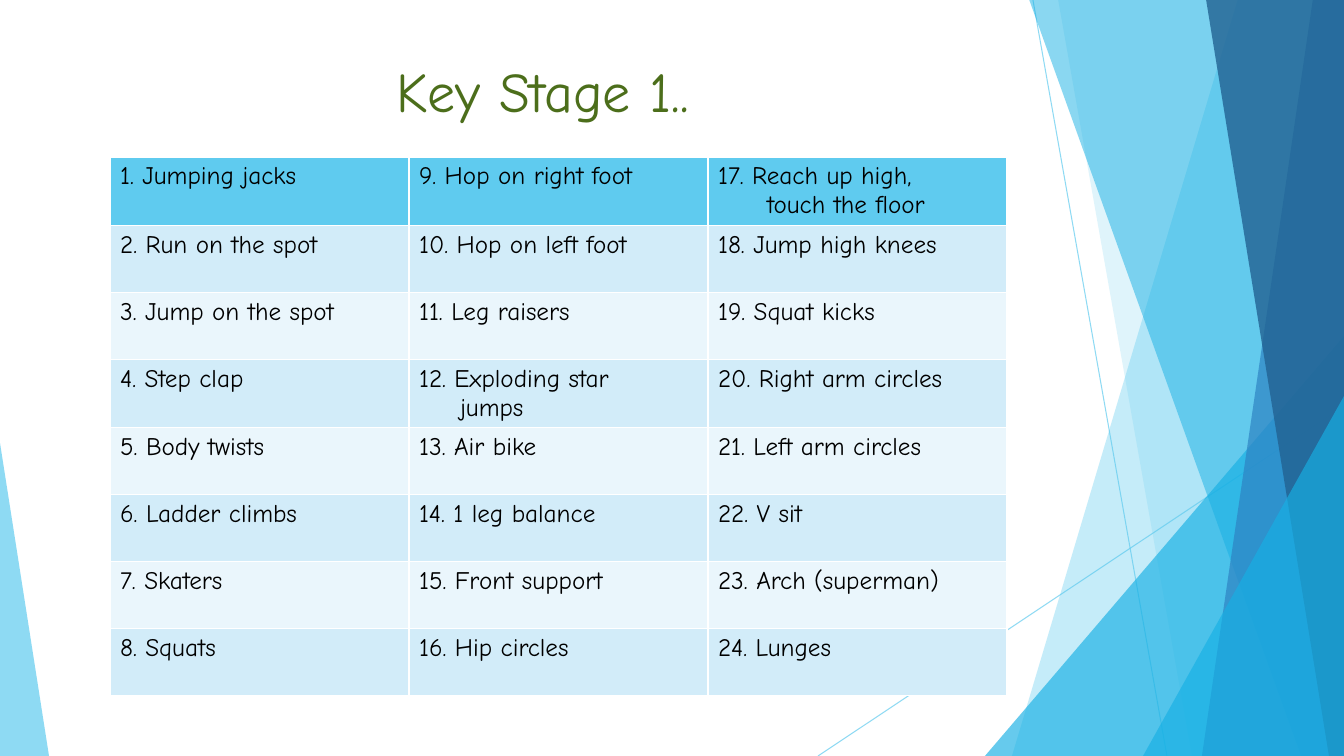
"""Build the Key Stage 1 exercise slide."""
from dataclasses import dataclass

import lxml.etree
import pptx
import pptx.dml.color
import pptx.dml.fill
import pptx.enum.shapes
import pptx.enum.text
import pptx.oxml.ns
import pptx.shapes.base
import pptx.slide
import pptx.util

EMU_PER_PX = 914400 / 100.8
SLIDE_WIDTH, SLIDE_HEIGHT = 1344, 756
FONT = "Comic Neue"
SKY, CYAN, BLUE, NAVY = "5FCBEF", "17B0E4", "2E83C3", "226292"
ROW_BANDS = ["D2ECF9", "EAF6FC"]
TABLE_LEFT, TABLE_TOP = 110, 157
COLUMN_WIDTH, ROW_HEIGHT = 299, 67
ROW_COUNT = 8
EXERCISES = [
    "Jumping jacks", "Run on the spot", "Jump on the spot", "Step clap",
    "Body twists", "Ladder climbs", "Skaters", "Squats",
    "Hop on right foot", "Hop on left foot", "Leg raisers", "Exploding star\njumps",
    "Air bike", "1 leg balance", "Front support", "Hip circles",
    "Reach up high,\ntouch the floor", "Jump high knees", "Squat kicks",
    "Right arm circles", "Left arm circles", "V sit", "Arch (superman)", "Lunges",
]
SECOND_LINE_INDENTS = {12: 41, 17: 49}


@dataclass
class Ray:
    start: tuple[int, int]
    end: tuple[int, int]


@dataclass
class Facet:
    top_x: int
    bottom_x: int
    colour: str
    opacity: int


@dataclass
class Triangle:
    left: int
    top: int
    width: int
    apex: int
    colour: str
    opacity: int


RAYS = [Ray((1033, 0), (1167, 756)), Ray((1344, 406), (818, 756))]
SHARDS = [
    Facet(1238, 1012, SKY, 36),
    Facet(1058, 1192, SKY, 20),
    Triangle(985, 336, 359, 1, CYAN, 66),
    Facet(1029, 1301, CYAN, 50),
    Facet(1313, 1202, BLUE, 70),
    Facet(1206, 1329, NAVY, 80),
    Triangle(1143, 396, 201, 1, CYAN, 66),
    Triangle(0, 443, 49, 0, SKY, 70),
]


def px(length: int) -> pptx.util.Emu:
    return pptx.util.Emu(round(length * EMU_PER_PX))


def rgb(colour: str) -> pptx.dml.color.RGBColor:
    return pptx.dml.color.RGBColor.from_string(colour)


def paint(fill: pptx.dml.fill.FillFormat, colour: str) -> None:
    fill.solid()
    fill.fore_color.rgb = rgb(colour)


def set_opacity(shape: pptx.shapes.base.BaseShape, percent: int) -> None:
    colour = next(shape.element.spPr.iter(pptx.oxml.ns.qn("a:srgbClr")))
    alpha = lxml.etree.SubElement(colour, pptx.oxml.ns.qn("a:alpha"))
    alpha.set("val", str(percent * 1000))


def draw_ray(page: pptx.slide.Slide, ray: Ray) -> None:
    line = page.shapes.add_connector(
        pptx.enum.shapes.MSO_CONNECTOR.STRAIGHT, *map(px, ray.start + ray.end))
    line.line.width = pptx.util.Pt(0.75)
    paint(line.line.fill, SKY)
    set_opacity(line, 70)
    lxml.etree.SubElement(line.element.spPr, pptx.oxml.ns.qn("a:effectLst"))


def draw_shard(page: pptx.slide.Slide, shard: Facet | Triangle) -> None:
    if isinstance(shard, Facet):
        builder = page.shapes.build_freeform(shard.top_x, -1, scale=EMU_PER_PX)
        builder.add_line_segments([
            (SLIDE_WIDTH, -1), (SLIDE_WIDTH, SLIDE_HEIGHT), (shard.bottom_x, SLIDE_HEIGHT)])
        shape = builder.convert_to_shape()
    else:
        shape = page.shapes.add_shape(
            pptx.enum.shapes.MSO_SHAPE.ISOSCELES_TRIANGLE, px(shard.left), px(shard.top),
            px(shard.width), px(SLIDE_HEIGHT - shard.top))
        shape.adjustments[0] = shard.apex
    shape.shadow.inherit = False
    shape.line.fill.background()
    paint(shape.fill, shard.colour)
    set_opacity(shape, shard.opacity)


def format_text(frame: pptx.text.text.TextFrame, size: int, colour: str) -> None:
    for para in frame.paragraphs:
        for span in para.runs:
            span.font.name = FONT
            span.font.size = pptx.util.Pt(size)
            span.font.bold = False
            span.font.color.rgb = rgb(colour)


def write_title(page: pptx.slide.Slide) -> None:
    title = page.shapes.title
    title.left, title.top, title.width, title.height = map(px, (181, 51, 723, 78))
    frame = title.text_frame
    frame.text = "Key Stage 1.."
    frame.vertical_anchor = pptx.enum.text.MSO_ANCHOR.TOP
    frame.paragraphs[0].alignment = pptx.enum.text.PP_ALIGN.CENTER
    format_text(frame, 40, "4C6E1B")


def draw_table(page: pptx.slide.Slide) -> None:
    column_count = len(EXERCISES) // ROW_COUNT
    table = page.shapes.add_table(
        ROW_COUNT, column_count, px(TABLE_LEFT), px(TABLE_TOP),
        px(COLUMN_WIDTH * column_count), px(ROW_HEIGHT * ROW_COUNT)).table
    for row in table.rows:
        row.height = px(ROW_HEIGHT)
    for index, exercise in enumerate(EXERCISES):
        column, row = divmod(index, ROW_COUNT)
        number = index + 1
        cell = table.cell(row, column)
        paint(cell.fill, ROW_BANDS[(row - 1) % 2] if row else SKY)
        cell.text_frame.text = f"{number}. {exercise}"
        format_text(cell.text_frame, 18, "000000")
        for para in cell.text_frame.paragraphs[1:]:
            properties = para._p.get_or_add_pPr()
            properties.set("marL", str(px(SECOND_LINE_INDENTS[number])))


def main() -> None:
    deck = pptx.Presentation()
    deck.slide_width, deck.slide_height = px(SLIDE_WIDTH), px(SLIDE_HEIGHT)
    page = deck.slides.add_slide(deck.slide_layouts[5])
    paint(page.background.fill, "FFFFFF")
    for ray in RAYS:
        draw_ray(page, ray)
    for shard in SHARDS:
        draw_shard(page, shard)
    write_title(page)
    draw_table(page)
    deck.save("out.pptx")


if __name__ == "__main__":
    main()
